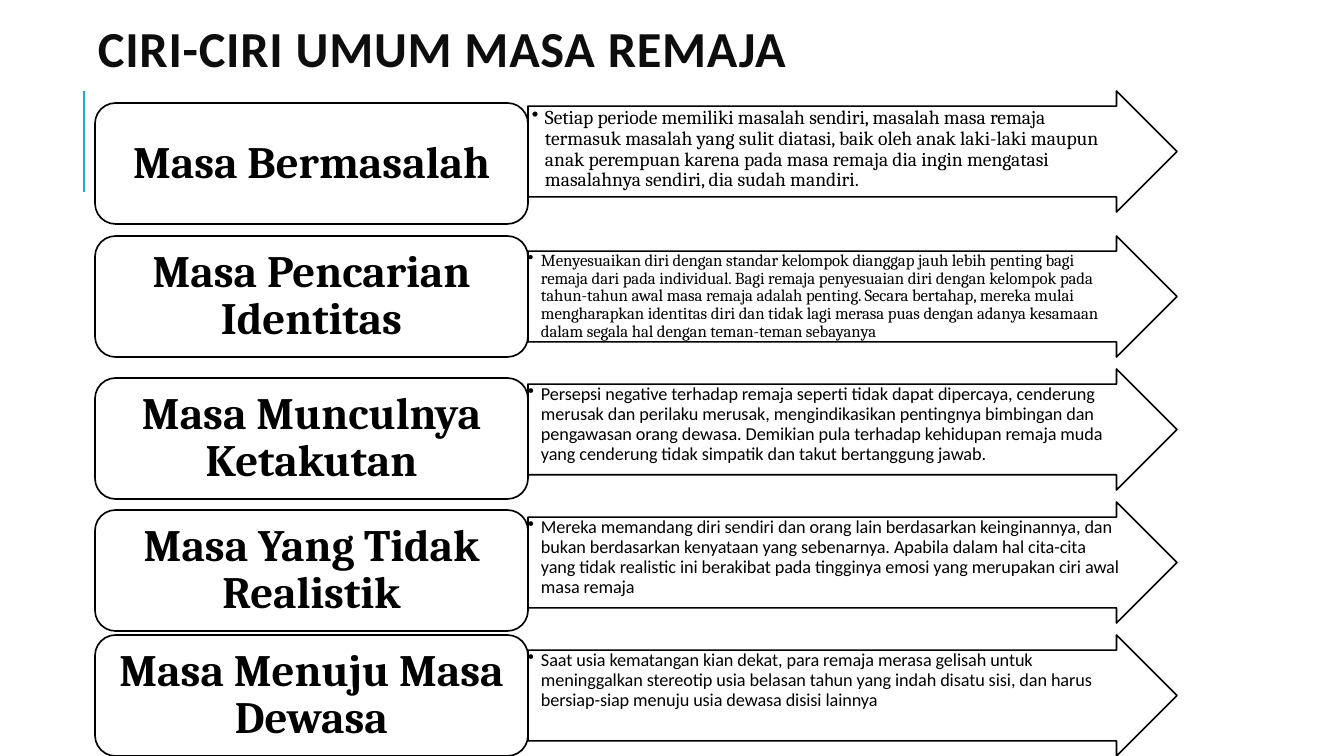
from pptx import Presentation
from pptx.dml.color import RGBColor
from pptx.enum.shapes import MSO_CONNECTOR, MSO_SHAPE
from pptx.enum.text import MSO_ANCHOR, PP_ALIGN
from pptx.oxml.ns import qn
from pptx.util import Pt
from lxml import etree

ARROW, ROUNDED = MSO_SHAPE.RIGHT_ARROW, MSO_SHAPE.ROUNDED_RECTANGLE
STRAIGHT = MSO_CONNECTOR.STRAIGHT
TOP, MIDDLE = MSO_ANCHOR.TOP, MSO_ANCHOR.MIDDLE
LEFT, CENTER = PP_ALIGN.LEFT, PP_ALIGN.CENTER

SLIDE_W, SLIDE_H = 1344, 756
SCALE = 12192000 / SLIDE_W
BLACK, TITLE_COLOR, ACCENT = "000000", "0D0D0D", "1CACE3"

LABEL_X, LABEL_W = 95, 433
ARROW_X, ARROW_W = LABEL_X + LABEL_W, 649
ROW_H = 121

# label top, arrow top, label, font, size, line spacing, text margins (left, top, right), text
ROWS = [
    (103, 91, "Masa Bermasalah", "Cambria", 14, 0.88, (4, 2, 19),
     "Setiap periode memiliki masalah sendiri, masalah masa remaja termasuk masalah "
     "yang sulit diatasi, baik oleh anak laki-laki maupun anak perempuan karena pada "
     "masa remaja dia ingin mengatasi masalahnya sendiri, dia sudah mandiri."),
    (236, 236, "Masa Pencarian Identitas", "Cambria", 12, 0.88, (0, 1, 19),
     "Menyesuaikan diri dengan standar kelompok dianggap jauh lebih penting bagi "
     "remaja dari pada individual. Bagi remaja penyesuaian diri dengan kelompok pada "
     "tahun-tahun awal masa remaja adalah penting. Secara bertahap, mereka mulai "
     "mengharapkan identitas diri dan tidak lagi merasa puas dengan adanya kesamaan "
     "dalam segala hal dengan teman-teman sebayanya"),
    (378, 369, "Masa Munculnya Ketakutan", "Calibri", 13, 0.92, (0, 0, 19),
     "Persepsi negative terhadap remaja seperti tidak dapat dipercaya, cenderung "
     "merusak dan perilaku merusak, mengindikasikan pentingnya bimbingan dan "
     "pengawasan orang dewasa. Demikian pula terhadap kehidupan remaja muda "
     "yang cenderung tidak simpatik dan takut bertanggung jawab."),
    (510, 502, "Masa Yang Tidak Realistik", "Calibri", 13, 0.92, (0, 0, 3),
     "Mereka memandang diri sendiri dan orang lain berdasarkan keinginannya, dan "
     "bukan berdasarkan kenyataan yang sebenarnya. Apabila dalam hal cita-cita\v"
     "yang tidak realistic ini berakibat pada tingginya emosi yang merupakan ciri awal "
     "masa remaja"),
    (635, 635, "Masa Menuju Masa Dewasa", "Calibri", 13, 0.92, (0, 0, 19),
     "Saat usia kematangan kian dekat, para remaja merasa gelisah untuk "
     "meninggalkan stereotip usia belasan tahun yang indah disatu sisi, dan harus "
     "bersiap-siap menuju usia dewasa disisi lainnya"),
]


def px(n):
    return round(n * SCALE)


def rgb(hex_color):
    return RGBColor.from_string(hex_color)


def write(sp, text, font, size, color=BLACK, bold=False, align=LEFT, anchor=TOP,
          margins=(0, 0, 0), line_spacing=None, tracking=-5):
    """Fill a shape with one paragraph; tracking is in hundredths of a point."""
    tf = sp.text_frame
    tf.word_wrap = True
    tf.vertical_anchor = anchor
    tf.margin_left, tf.margin_top, tf.margin_right = (px(m) for m in margins)
    tf.margin_bottom = 0
    p = tf.paragraphs[0]
    p.text = text
    p.alignment = align
    p.line_spacing = line_spacing
    p.font.name, p.font.size, p.font.bold = font, Pt(size), bold
    p.font.color.rgb = rgb(color)
    p._p.pPr.find(qn("a:defRPr")).set("spc", str(tracking))
    return p


def add_bullet(p, indent):
    pPr = p._p.get_or_add_pPr()
    pPr.set("marL", str(px(indent)))
    pPr.set("indent", str(-px(indent)))
    bullet = etree.Element(qn("a:buChar"), char="•")
    pPr.find(qn("a:defRPr")).addprevious(bullet)


def add_outline(slide, kind, x, y, w, h, adjustments):
    sp = slide.shapes.add_shape(kind, px(x), px(y), px(w), px(h))
    for i, value in enumerate(adjustments):
        sp.adjustments[i] = value
    sp.shadow.inherit = False
    sp.fill.background()
    sp.line.color.rgb = rgb(BLACK)
    sp.line.width = Pt(1.2)
    return sp


def add_title(slide, text):
    sp = slide.shapes.add_textbox(px(97), px(16), px(1032), px(64))
    write(sp, text, "Calibri", 36, TITLE_COLOR, bold=True, margins=(1, 1, 0), tracking=55)


def add_accent_line(slide):
    line = slide.shapes.add_connector(STRAIGHT, px(84), px(192), px(84), px(91))
    line.line.color.rgb = rgb(ACCENT)
    line.line.width = Pt(1.44)
    etree.SubElement(line._element.spPr, qn("a:effectLst"))


def add_row(slide, label_y, arrow_y, label, font, size, spacing, margins, text):
    arrow = add_outline(slide, ARROW, ARROW_X, arrow_y, ARROW_W, ROW_H, (0.75, 0.5))
    p = write(arrow, text, font, size, margins=margins, line_spacing=spacing)
    add_bullet(p, 13)
    box = add_outline(slide, ROUNDED, LABEL_X, label_y, LABEL_W, ROW_H, (0.17,))
    write(box, label, "Cambria", 32, bold=True, align=CENTER, anchor=MIDDLE,
          line_spacing=Pt(33.9))


def main():
    prs = Presentation()
    prs.slide_width, prs.slide_height = px(SLIDE_W), px(SLIDE_H)
    slide = prs.slides.add_slide(prs.slide_layouts[6])

    # Heading
    add_accent_line(slide)
    add_title(slide, "CIRI-CIRI UMUM MASA REMAJA")

    # Traits, each with an arrow of explanation
    for row in ROWS:
        add_row(slide, *row)

    prs.save("out.pptx")


if __name__ == "__main__":
    main()
